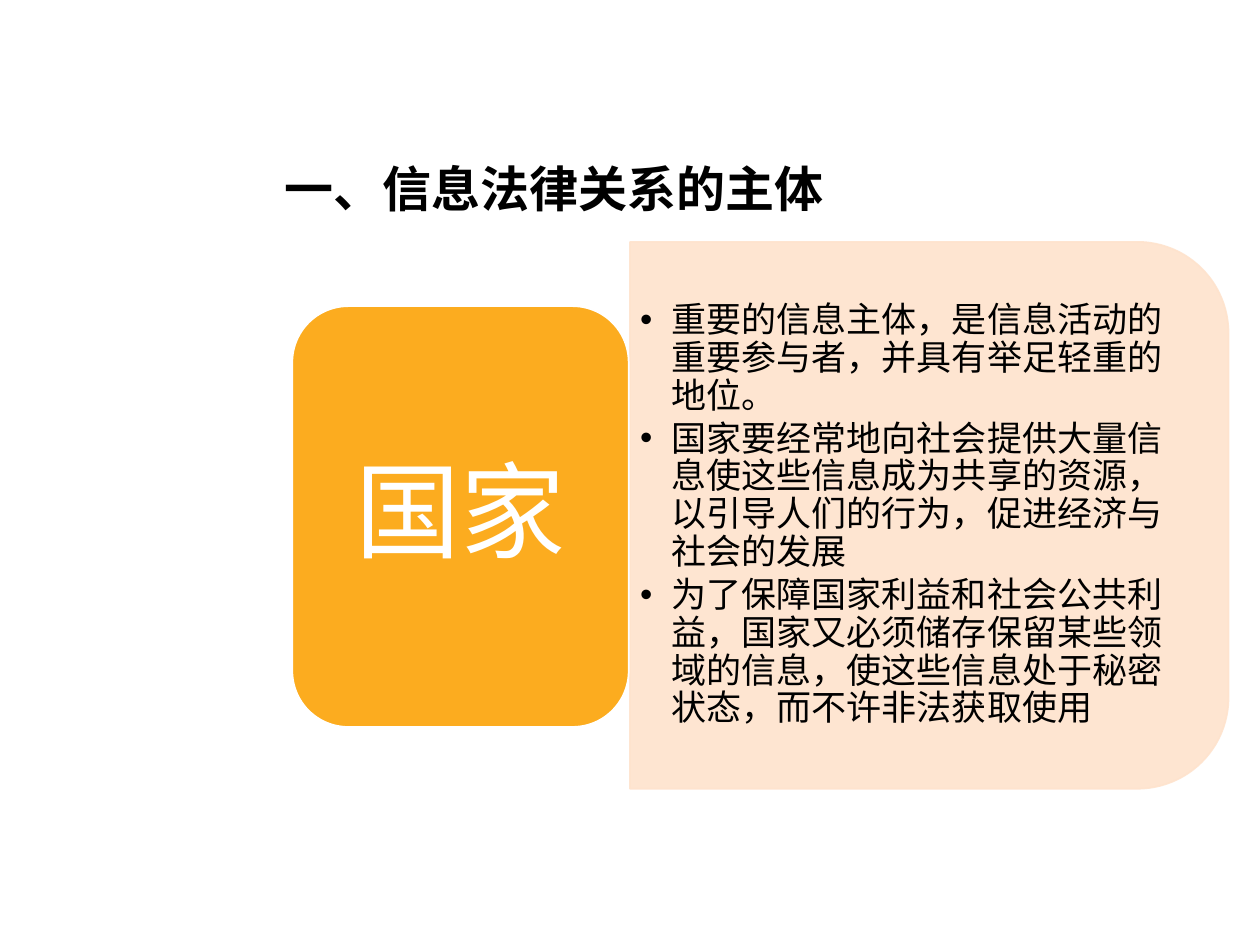
from dataclasses import dataclass

import pptx
import pptx.dml.color
import pptx.enum.shapes
import pptx.enum.text
import pptx.oxml.ns
import pptx.util
from lxml import etree

Inches = pptx.util.Inches
Pt = pptx.util.Pt
Shape = pptx.enum.shapes.MSO_SHAPE
Align = pptx.enum.text.PP_ALIGN
Anchor = pptx.enum.text.MSO_ANCHOR
qn = pptx.oxml.ns.qn


@dataclass(frozen=True)
class Theme:
    ink: str = "000000"
    white: str = "FFFFFF"
    label_fill: str = "FCAC1F"
    panel_fill: str = "FEE3CD"
    panel_opacity: int = 90
    title_font: str = "DejaVu Sans"
    body_font: str = "Arial"
    title_size: int = 28
    body_size: int = 20
    label_size: int = 60


THEME = Theme()
HEADING = "一、信息法律关系的主体"
SUBJECT = "国家"
POINTS = [
    "重要的信息主体，是信息活动的重要参与者，并具有举足轻重的地位。",
    "国家要经常地向社会提供大量信息使这些信息成为共享的资源，以引导人们的行为，促进经济与社会的发展",
    "为了保障国家利益和社会公共利益，国家又必须储存保留某些领域的信息，使这些信息处于秘密状态，而不许非法获取使用",
]


def rgb(value):
    return pptx.dml.color.RGBColor.from_string(value)


def add_run(paragraph, text, font, size, color, bold=False):
    run = paragraph.add_run()
    run.text = text
    run.font.name = font
    run.font.size = Pt(size)
    run.font.bold = bold
    run.font.color.rgb = rgb(color)


def paint(shape, fill, line):
    shape.shadow.inherit = False
    shape.fill.solid()
    shape.fill.fore_color.rgb = rgb(fill)
    shape.line.color.rgb = rgb(line)
    shape.line.width = Pt(1)


def set_opacity(shape, percent):
    for color in shape._element.spPr.iter(qn("a:srgbClr")):
        etree.SubElement(color, qn("a:alpha"), val=str(percent * 1000))


def set_insets(frame, horizontal, vertical):
    frame.margin_left = frame.margin_right = Inches(horizontal)
    frame.margin_top = frame.margin_bottom = Inches(vertical)


def add_bullet(paragraph, indent):
    properties = paragraph._p.get_or_add_pPr()
    properties.set("marL", str(Inches(indent)))
    properties.set("indent", str(Inches(-indent)))
    etree.SubElement(properties, qn("a:buFont"), typeface=THEME.body_font)
    etree.SubElement(properties, qn("a:buChar"), char="•")


def place_title(slide, left, top, width, height):
    title = slide.shapes.title
    title.left, title.top = Inches(left), Inches(top)
    title.width, title.height = Inches(width), Inches(height)
    frame = title.text_frame
    frame.word_wrap = True
    frame.auto_size = pptx.enum.text.MSO_AUTO_SIZE.NONE
    frame.vertical_anchor = Anchor.TOP
    heading = frame.paragraphs[0]
    heading.alignment = Align.LEFT
    add_run(heading, HEADING, THEME.title_font, THEME.title_size, THEME.ink, bold=True)


def add_points_panel(slide, left, top, width, height):
    # Panel: a quarter turn moves its rounded top corners to the right
    panel = slide.shapes.add_shape(
        Shape.ROUND_2_SAME_RECTANGLE,
        Inches(left + (width - height) / 2), Inches(top + (height - width) / 2),
        Inches(height), Inches(width))
    panel.rotation = 90
    paint(panel, THEME.panel_fill, THEME.panel_fill)
    set_opacity(panel, THEME.panel_opacity)

    # Points stay upright, clear of the rounded corners
    corner = 0.21
    points = slide.shapes.add_textbox(
        Inches(left), Inches(top + corner),
        Inches(width - corner), Inches(height - 2 * corner))
    frame = points.text_frame
    frame.word_wrap = True
    frame.vertical_anchor = Anchor.MIDDLE
    set_insets(frame, 0.08, 0.04)
    for index, text in enumerate(POINTS):
        point = frame.add_paragraph() if index else frame.paragraphs[0]
        point.line_spacing = 0.9
        point.space_after = Pt(THEME.body_size * 0.15)
        add_bullet(point, 0.25)
        add_run(point, text, THEME.body_font, THEME.body_size, THEME.ink)


def add_subject_label(slide, left, top, width, height):
    label = slide.shapes.add_shape(
        Shape.ROUNDED_RECTANGLE,
        Inches(left), Inches(top), Inches(width), Inches(height))
    paint(label, THEME.label_fill, THEME.white)
    frame = label.text_frame
    frame.word_wrap = True
    frame.vertical_anchor = Anchor.MIDDLE
    set_insets(frame, 0.25, 0.12)
    subject = frame.paragraphs[0]
    subject.alignment = Align.CENTER
    subject.line_spacing = 0.9
    subject.space_after = Pt(THEME.label_size * 0.35)
    add_run(subject, SUBJECT, THEME.body_font, THEME.label_size, THEME.white)


def main():
    deck = pptx.Presentation()
    deck.slide_width, deck.slide_height = Inches(10), Inches(7.5)
    slide = deck.slides.add_slide(deck.slide_layouts[5])
    place_title(slide, 2.16, 1.21, 7.09, 1.38)
    add_points_panel(slide, 5, 1.92, 4.75, 4.34)
    add_subject_label(slide, 2.32, 2.43, 2.67, 3.34)
    deck.save("out.pptx")


if __name__ == "__main__":
    main()
